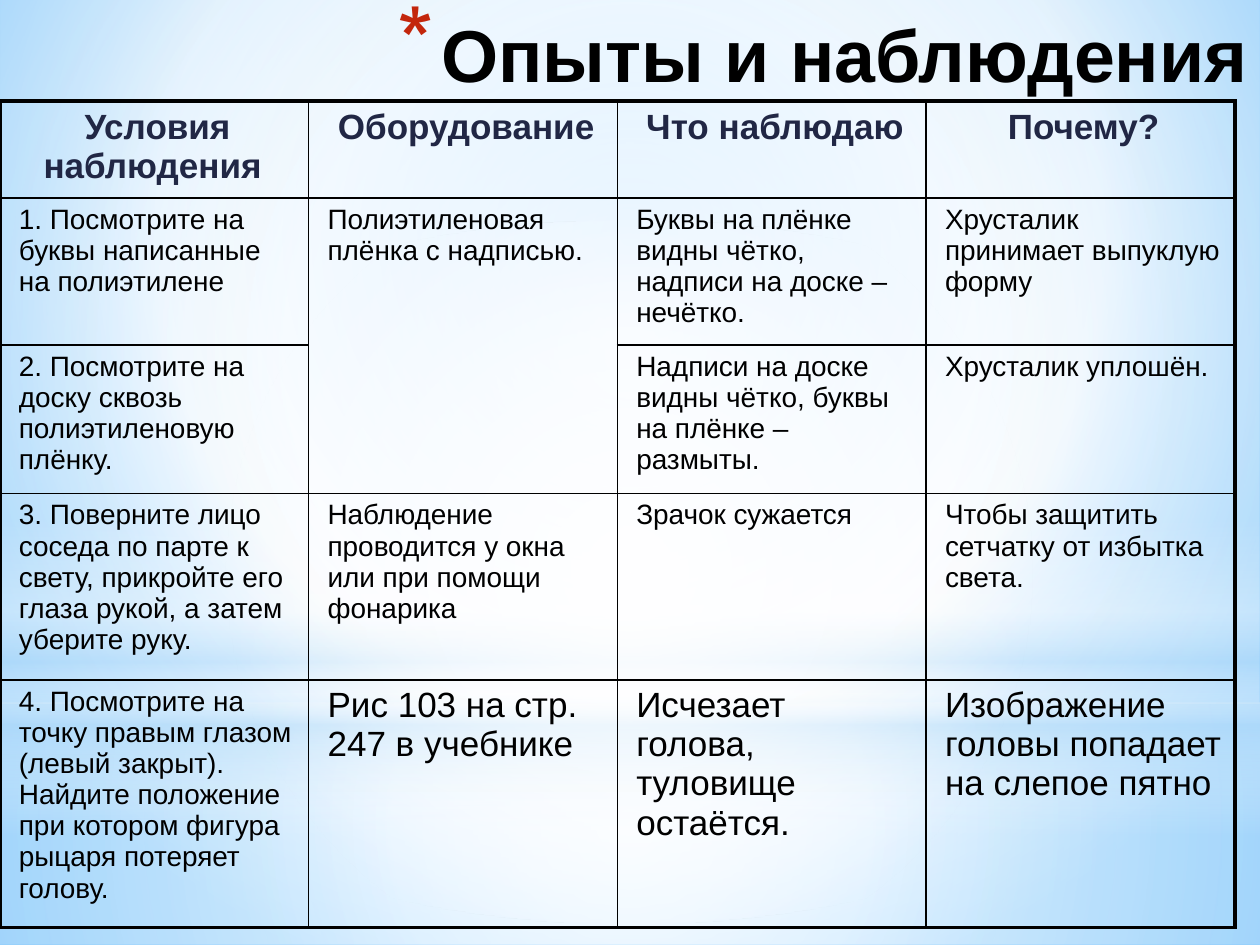
from lxml import etree
from pptx import Presentation
from pptx.dml.color import RGBColor
from pptx.enum.shapes import MSO_SHAPE
from pptx.enum.text import MSO_ANCHOR, PP_ALIGN
from pptx.oxml.ns import qn
from pptx.util import Inches, Pt

RECT, OVAL = MSO_SHAPE.RECTANGLE, MSO_SHAPE.OVAL
LEFT, CENTER, RIGHT = PP_ALIGN.LEFT, PP_ALIGN.CENTER, PP_ALIGN.RIGHT
MIDDLE = MSO_ANCHOR.MIDDLE

COLORS = {"black": "000000", "navy": "212745", "red": "C3260C", "white": "FFFFFF",
          "pale": "B4DCFA", "sky": "9ED5FF", "blue": "5BB9FF"}
WIDTH, HEIGHT = 10, 7.5
HALF = (50, 50, 50, 50)
THIN, THICK = 1, 2.25

HEADERS = ["Условия наблюдения ", "Оборудование", "Что наблюдаю", "Почему?"]
ROWS = [
    ["1. Посмотрите на буквы написанные на полиэтилене",
     "Полиэтиленовая плёнка с надписью.",
     "Буквы на плёнке видны чётко, надписи на доске – нечётко.",
     "Хрусталик принимает выпуклую форму"],
    ["2. Посмотрите на доску сквозь полиэтиленовую плёнку.",
     "",
     "Надписи на доске видны чётко, буквы на плёнке – размыты.",
     "Хрусталик уплошён."],
    ["3. Поверните лицо соседа по парте к свету, прикройте его глаза рукой, а затем уберите руку.",
     "Наблюдение проводится у окна или при помощи фонарика",
     "Зрачок сужается",
     "Чтобы защитить сетчатку от избытка света."],
    ["4. Посмотрите на точку правым глазом (левый закрыт). Найдите положение при котором "
     "фигура рыцаря потеряет голову.",
     "Рис 103 на стр. 247 в учебнике",
     "Исчезает голова, туловище остаётся.",
     "Изображение головы попадает на слепое пятно"],
]
ROW_HEIGHTS = [0.74, 0.98, 1.18, 1.48, 1.55]


def add(parent, tag, **attrs):
    return etree.SubElement(parent, qn(tag), {k: str(v) for k, v in attrs.items()})


class Deck:
    font = "Arial"

    def __init__(self):
        self.prs = Presentation()
        self.prs.slide_width, self.prs.slide_height = Inches(WIDTH), Inches(HEIGHT)
        self.s = self.prs.slides.add_slide(self.prs.slide_layouts[6])

    def box(self, x, y, w, h):
        return [Inches(v) for v in (x * WIDTH, y * HEIGHT, w * WIDTH, h * HEIGHT)]

    def gradient(self, fill, element, stops, focus):
        fill.gradient()
        grad = element.xpath(".//a:gradFill")[0]
        for child in list(grad):
            grad.remove(child)
        gs_list = add(grad, "a:gsLst")
        for pos, color, alpha in stops:
            gs = add(gs_list, "a:gs", pos=pos * 1000)
            clr = add(gs, "a:srgbClr", val=COLORS[color])
            if alpha < 100:
                add(clr, "a:alpha", val=alpha * 1000)
        if focus:
            circle = add(grad, "a:path", path="circle")
            add(circle, "a:fillToRect", **{k: v * 1000 for k, v in zip("ltrb", focus)})
        else:
            add(grad, "a:lin", ang=90 * 60000, scaled=0)

    def background(self, stops, focus):
        self.gradient(self.s.background.fill, self.s.element, stops, focus)

    def glow(self, kind, y, h, stops, focus=HALF):
        sp = self.s.shapes.add_shape(kind, *self.box(0, y, 1, h))
        sp.shadow.inherit = False
        sp.line.fill.background()
        self.gradient(sp.fill, sp.element, stops, focus)

    def style(self, p, size, color="black", bold=False, align=LEFT):
        p.alignment = align
        for r in p.runs:
            r.font.name, r.font.size, r.font.bold = self.font, Pt(size), bold
            r.font.color.rgb = RGBColor.from_string(COLORS[color])

    def title(self, text, x, y, w, h):
        tf = self.s.shapes.add_textbox(*self.box(x, y, w, h)).text_frame
        tf.word_wrap, tf.vertical_anchor = True, MIDDLE
        p = tf.paragraphs[0]
        p.text = text
        pPr = p._p.get_or_add_pPr()
        pPr.set("marL", str(Inches(0.35)))
        pPr.set("indent", str(-Inches(0.35)))
        add(add(pPr, "a:buClr"), "a:srgbClr", val=COLORS["red"])
        add(pPr, "a:buSzPct", val=128000)
        add(pPr, "a:buChar", char="*")
        self.style(p, 42, bold=True, align=RIGHT)

    def borders(self, cell, widths):
        tcPr = cell._tc.get_or_add_tcPr()
        for i, (side, width) in enumerate(zip("LRTB", widths)):
            ln = add(tcPr, "a:ln" + side, w=Pt(width))
            add(add(ln, "a:solidFill"), "a:srgbClr", val=COLORS["black"])
            tcPr.insert(i, ln)

    def table(self, rows, heights, x, y, w):
        n_rows, n_cols = len(rows), len(rows[0])
        frame = self.s.shapes.add_table(n_rows, n_cols,
                                        *self.box(x, y, w, sum(heights) / HEIGHT))
        table = frame.table
        table.horz_banding = table.first_row = False
        for row, height in zip(table.rows, heights):
            row.height = Inches(height)
        for i, row in enumerate(rows):
            for j, text in enumerate(row):
                cell = table.cell(i, j)
                cell.fill.background()
                edges = (j == 0, j == n_cols - 1, i == 0, i == n_rows - 1)
                self.borders(cell, [THICK if edge else THIN for edge in edges])
                p = cell.text_frame.paragraphs[0]
                p.text = text
                p.space_after = Pt(3)
                p._p.get_or_add_pPr().set("marL", str(Inches(0.05)))
                if i == 0:
                    self.style(p, 20, "navy", True, CENTER)
                else:
                    self.style(p, 20 if i == n_rows - 1 and j else 16)
        return table


def main():
    deck = Deck()
    deck.background([(0, "sky", 100), (60, "white", 100), (100, "blue", 100)], (20, 10, 20, 60))
    deck.glow(RECT, 0.744, 0.256, [(0, "white", 91), (37, "white", 76), (100, "pale", 79)])
    deck.glow(RECT, 0, 0.744, [(0, "white", 89), (48, "white", 62), (100, "pale", 79)])
    deck.glow(RECT, 0.55, 0.333, [(0, "white", 0), (29, "white", 30), (45, "pale", 40),
                                  (55, "white", 26), (65, "pale", 60), (100, "white", 0)], None)
    deck.glow(OVAL, 0.233, 0.744, [(0, "white", 100), (56, "white", 0)])
    deck.title("Опыты и наблюдения", 0.288, 0, 0.712, 0.112)
    table = deck.table([HEADERS] + ROWS, ROW_HEIGHTS, 0, 0.107, 0.98)
    table.cell(1, 1).merge(table.cell(2, 1))
    deck.prs.save("out.pptx")


if __name__ == "__main__":
    main()
